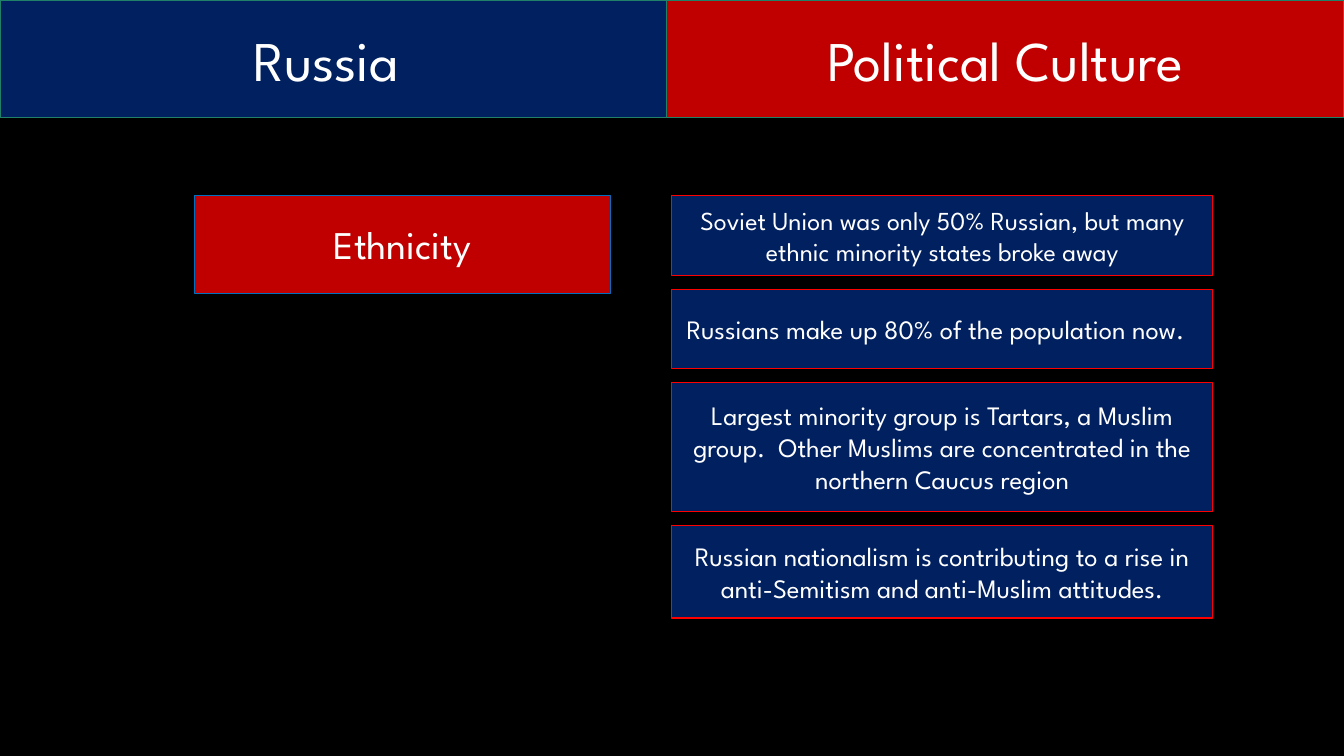
from pptx import Presentation
from pptx.dml.color import RGBColor
from pptx.enum.shapes import MSO_SHAPE
from pptx.enum.text import MSO_ANCHOR, PP_ALIGN
from pptx.util import Pt

RECTANGLE = MSO_SHAPE.RECTANGLE
MIDDLE = MSO_ANCHOR.MIDDLE
CENTER = PP_ALIGN.CENTER

NAVY = "002060"
CRIMSON = "C00000"
GREEN = "1E8168"
BLUE = "0070C0"
RED = "FF0000"
WHITE = "FFFFFF"
BLACK = "000000"


def color(value):
    return RGBColor.from_string(value)


def add_box(page, left, top, width, height, text, size, fill, line, line_width):
    box = page.shapes.add_shape(RECTANGLE, Pt(left), Pt(top), Pt(width), Pt(height))
    box.shadow.inherit = False
    box.fill.solid()
    box.fill.fore_color.rgb = color(fill)
    box.line.color.rgb = color(line)
    box.line.width = Pt(line_width)
    frame = box.text_frame
    frame.word_wrap = True
    frame.vertical_anchor = MIDDLE
    para = frame.paragraphs[0]
    para.text = text
    para.alignment = CENTER
    para.font.name = "League Spartan"
    para.font.size = Pt(size)
    para.font.color.rgb = color(WHITE)


deck = Presentation()
deck.slide_width = Pt(960)
deck.slide_height = Pt(540)
page = deck.slides.add_slide(deck.slide_layouts[6])
page.background.fill.solid()
page.background.fill.fore_color.rgb = color(BLACK)

split = 476
header_height = 84
add_box(page, 0, 0, split, header_height, "Russia ", 40, NAVY, GREEN, 1)
add_box(page, split, 0, 960 - split, header_height, "Political Culture", 40, CRIMSON, GREEN, 1)

body_top = 139.5
add_box(page, 139, body_top, 297, 70, "Ethnicity", 28, CRIMSON, BLUE, 1)

facts = [
    ("Soviet Union was only 50% Russian, but many ethnic minority states broke away", 57, 18.5),
    ("Russians make up 80% of the population now.  ", 57, 19),
    ("Largest minority group is Tartars, a Muslim group.  Other Muslims are "
     "concentrated in the northern Caucus region", 92, 19),
    ("Russian nationalism is contributing to a rise in anti-Semitism and "
     "anti-Muslim attitudes.", 66, 19),
]
fact_gap = 10
fact_top = body_top
for text, height, size in facts:
    add_box(page, 480, fact_top, 386, height, text, size, NAVY, RED, 0.75)
    fact_top += height + fact_gap

deck.save("out.pptx")
